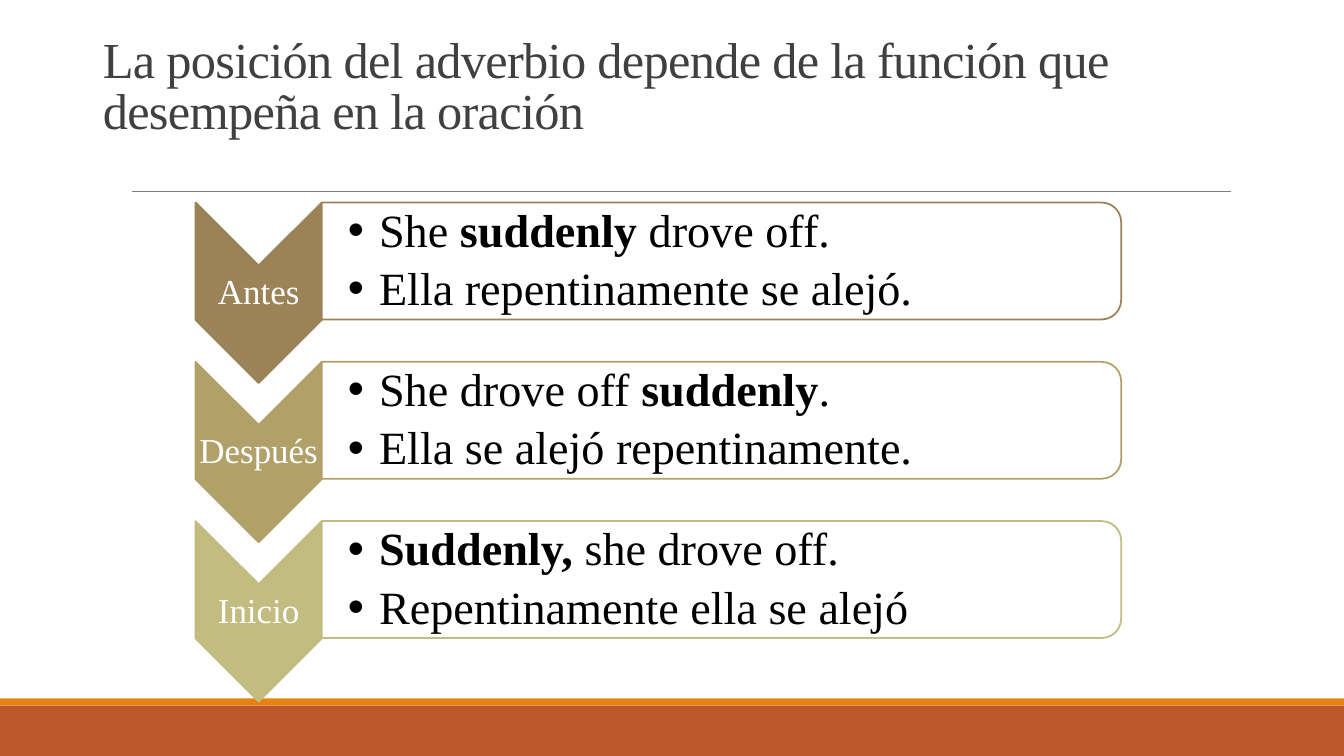
from lxml import etree
from pptx import Presentation
from pptx import util as u
from pptx.dml.color import RGBColor
from pptx.enum import shapes, text
from pptx.oxml import ns

PX = 9144
WIDE, HIGH = 1333, 750
FONT = "Times New Roman"
WHITE = RGBColor(0xFF, 0xFF, 0xFF)
BLACK = RGBColor(0, 0, 0)
DARK = RGBColor(0x40, 0x40, 0x40)
GRAY = RGBColor(0x80, 0x80, 0x80)
RUST = RGBColor(0xBD, 0x58, 0x2C)
AMBER = RGBColor(0xE4, 0x83, 0x12)
BROWN = RGBColor(0x9B, 0x83, 0x57)
TAN = RGBColor(0xB1, 0xA1, 0x69)
OLIVE = RGBColor(0xC2, 0xBC, 0x80)

TITLE = "La posición del adverbio depende de la función que desempeña en la oración"
ROWS = [
    ("Antes", BROWN, [
        [("She ", False), ("suddenly ", True), ("drove off.", False)],
        [("Ella repentinamente se alejó.", False)]]),
    ("Después", TAN, [
        [("She drove off ", False), ("suddenly", True), (".", False)],
        [("Ella se alejó repentinamente.", False)]]),
    ("Inicio", OLIVE, [
        [("Suddenly,", True), (" she drove off.", False)],
        [("Repentinamente ella se alejó", False)]]),
]


def emu(*nums):
    return [u.Emu(round(n * PX)) for n in nums]


def add_run(para, words, size, color, bold=False):
    run = para.add_run()
    run.text = words
    font = run.font
    font.name, font.size, font.bold = FONT, u.Pt(size), bold
    font.color.rgb = color
    return run


def add_form(slide, kind, box, fill, line=None):
    form = slide.shapes.add_shape(kind, *emu(*box))
    form.shadow.inherit = False
    form.fill.solid()
    form.fill.fore_color.rgb = fill
    if line is None:
        form.line.fill.background()
    else:
        form.line.color.rgb = line
        form.line.width = u.Pt(1.25)
    return form


def add_turned(slide, kind, box, fill, line):
    left, top, wide, high = box
    shift = (wide - high) / 2
    form = add_form(slide, kind, (left + shift, top - shift, high, wide), fill, line)
    form.rotation = 90


def add_box(slide, box, inset):
    frame = slide.shapes.add_textbox(*emu(*box)).text_frame
    frame.word_wrap = True
    frame.vertical_anchor = text.MSO_ANCHOR.MIDDLE
    frame.margin_left, frame.margin_right = emu(inset, 2)
    frame.margin_top, frame.margin_bottom = emu(2, 2)
    return frame


def add_bullet(para):
    props = para._p.get_or_add_pPr()
    props.set("marL", str(31 * PX))
    props.set("indent", str(-31 * PX))
    etree.SubElement(props, ns.qn("a:buFont")).set("typeface", "Arial")
    etree.SubElement(props, ns.qn("a:buChar")).set("char", "•")


def add_frame(slide, box):
    left, top, wide, high = box
    rect = shapes.MSO_SHAPE.RECTANGLE
    add_form(slide, rect, (left, top + high - 50, wide, 50), RUST)
    add_form(slide, rect, (left, top + high - 57, wide, 7), AMBER)
    rule = slide.shapes.add_connector(
        shapes.MSO_CONNECTOR.STRAIGHT,
        *emu(left + 131, top + 190, left + 1221, top + 190))
    rule.line.color.rgb = GRAY
    rule.line.width = u.Pt(0.5)
    etree.SubElement(rule._element.spPr, ns.qn("a:effectLst"))


def add_title(slide, box):
    title = slide.shapes.title
    title.left, title.top, title.width, title.height = emu(*box)
    frame = title.text_frame
    frame.auto_size = text.MSO_AUTO_SIZE.NONE
    frame.vertical_anchor = text.MSO_ANCHOR.BOTTOM
    para = frame.paragraphs[0]
    para.alignment = text.PP_ALIGN.LEFT
    para.line_spacing = 0.85
    run = add_run(para, TITLE, 36, DARK)
    run._r.get_or_add_rPr().set("spc", "-50")


def add_row(slide, box, label, color, lines):
    left, top, wide, high = box
    arm = 125
    add_turned(slide, shapes.MSO_SHAPE.CHEVRON, (left, top, arm, high), color, color)
    para = add_box(slide, (left, top + 63, arm, 54), 2).paragraphs[0]
    para.alignment = text.PP_ALIGN.CENTER
    para.line_spacing = 0.9
    add_run(para, label, 25, WHITE)

    add_turned(slide, shapes.MSO_SHAPE.ROUND_2_SAME_RECTANGLE,
               (left + arm, top, wide - arm, 116), WHITE, color)
    frame = add_box(slide, (left + arm, top + 6, wide - arm - 6, 105), 26)
    for i, parts in enumerate(lines):
        para = frame.add_paragraph() if i else frame.paragraphs[0]
        para.line_spacing = 0.9
        para.space_after = u.Pt(6)
        add_bullet(para)
        for words, bold in parts:
            add_run(para, words, 33, BLACK, bold)


def add_list(slide, box):
    left, top, wide, high = box
    tall = 179
    step = (high - tall) / (len(ROWS) - 1)
    for i, row in enumerate(ROWS):
        add_row(slide, (left, top + i * step, wide, tall), *row)


def main():
    deck = Presentation()
    deck.slide_width, deck.slide_height = emu(WIDE, HIGH)
    slide = deck.slides.add_slide(deck.slide_layouts[5])
    add_frame(slide, (0, 0, WIDE, HIGH))
    add_title(slide, (92, 40, 1150, 104))
    add_list(slide, (194, 201, 918, 495))
    deck.save("out.pptx")


if __name__ == "__main__":
    main()
